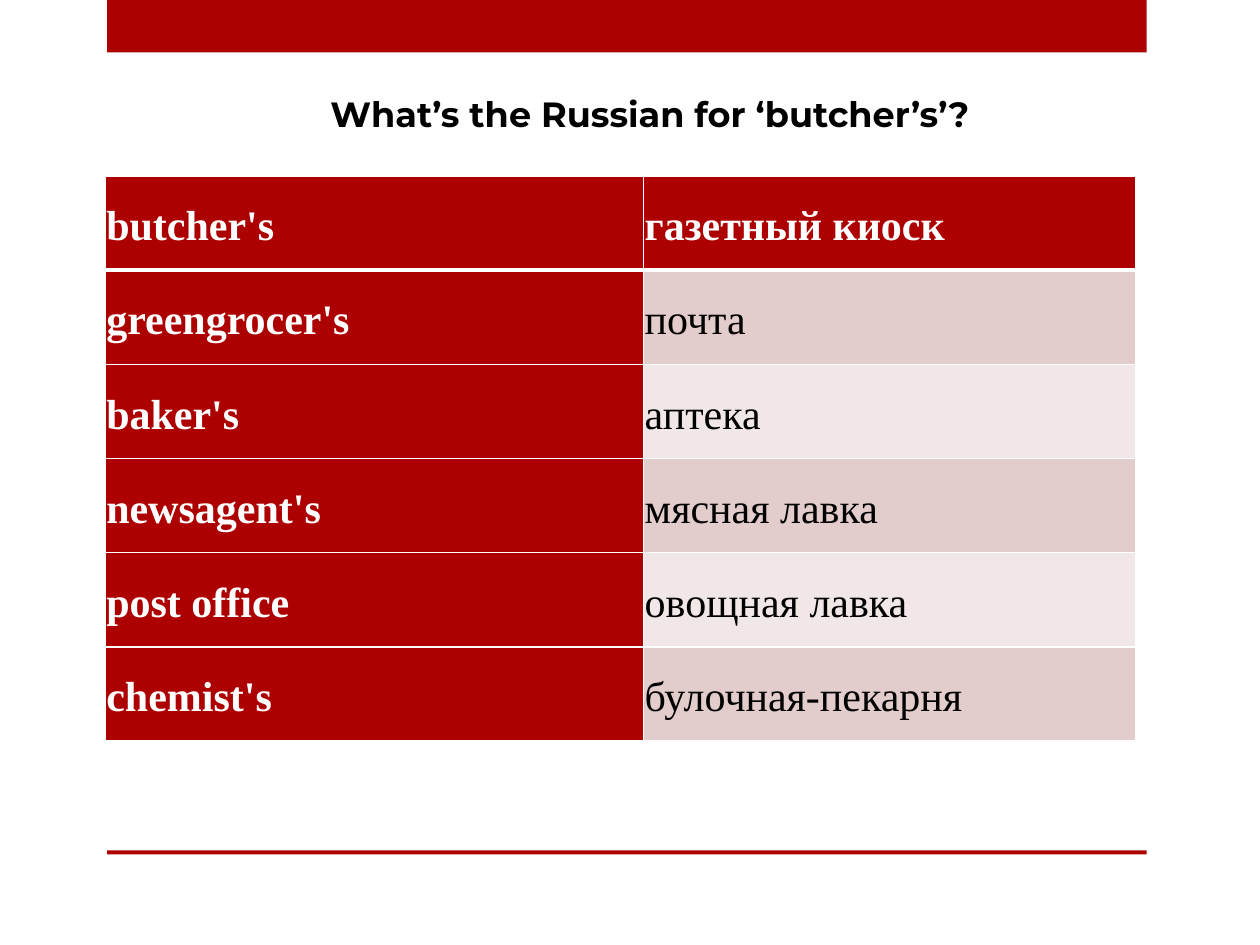
"""Build a vocabulary slide that pairs English shop names with Russian ones."""
from lxml.etree import SubElement
from pptx import Presentation
from pptx.dml.color import RGBColor
from pptx.enum.shapes import MSO_SHAPE
from pptx.enum.text import MSO_ANCHOR, PP_ALIGN
from pptx.oxml.ns import qn
from pptx.util import Pt

TITLE = "What’s the Russian for ‘butcher’s’?"
WORDS = [
    ("butcher's", "газетный киоск"),
    ("greengrocer's", "почта"),
    ("baker's", "аптека"),
    ("newsagent's", "мясная лавка"),
    ("post office", "овощная лавка"),
    ("chemist's", "булочная-пекарня"),
]
COLORS = {"red": "AD0101", "odd": "E3CCCC", "even": "F1E7E7",
          "white": "FFFFFF", "black": "000000"}
BANDS = [(61.2, 0, 594, 30), (61.2, 486, 594, 2.2)]
TITLE_BOX = (139, 49, 465, 31.5)
TABLE_LEFT, TABLE_TOP = 60, 100.5
COLUMN_WIDTHS = (307.7, 281.3)
ROW_HEIGHT = 53.85
CELL_INSET = 0.75


def color(name):
    return RGBColor.from_string(COLORS[name])


def write(frame, text, *, font, size, ink, bold, align=PP_ALIGN.LEFT,
          spacing=1.0, after=0):
    para = frame.paragraphs[0]
    para.alignment = align
    para.line_spacing = spacing
    para.space_before = Pt(0)
    para.space_after = Pt(after)
    span = para.add_run()
    span.text = text
    span.font.name = font
    span.font.size = Pt(size)
    span.font.bold = bold
    span.font.color.rgb = color(ink)


def add_borders(cell, widths):
    properties = cell._tc.get_or_add_tcPr()
    for side, width in widths.items():
        line = SubElement(properties, qn(f"a:ln{side}"), w=str(Pt(width)))
        fill = SubElement(line, qn("a:solidFill"))
        SubElement(fill, qn("a:srgbClr"), val=COLORS["white"])


def add_band(page, box):
    band = page.shapes.add_shape(MSO_SHAPE.RECTANGLE, *map(Pt, box))
    band.shadow.inherit = False
    band.fill.solid()
    band.fill.fore_color.rgb = color("red")
    band.line.fill.background()


def add_title(page):
    title = page.shapes.title
    title.left, title.top, title.width, title.height = map(Pt, TITLE_BOX)
    frame = title.text_frame
    frame.word_wrap = True
    frame.vertical_anchor = MSO_ANCHOR.TOP
    write(frame, TITLE, font="Montserrat", size=20, ink="black", bold=True,
          align=PP_ALIGN.CENTER)


def fill_cell(cell, text, row, column):
    strong = row == 0 or column == 0
    add_borders(cell, {"L": 1, "R": 1, "T": 3 if row == 1 else 1,
                       "B": 3 if row == 0 else 1})
    cell.fill.solid()
    cell.fill.fore_color.rgb = color(
        "red" if strong else "odd" if row % 2 else "even")
    cell.vertical_anchor = MSO_ANCHOR.MIDDLE
    cell.margin_left = cell.margin_right = Pt(CELL_INSET)
    cell.margin_top = cell.margin_bottom = Pt(CELL_INSET)
    write(cell.text_frame, text, font="Times New Roman", size=24,
          ink="white" if strong else "black", bold=strong,
          spacing=1.15, after=10)


def add_words(page):
    table = page.shapes.add_table(
        len(WORDS), len(COLUMN_WIDTHS), Pt(TABLE_LEFT), Pt(TABLE_TOP),
        Pt(sum(COLUMN_WIDTHS)), Pt(ROW_HEIGHT * len(WORDS))).table
    for column, width in zip(table.columns, COLUMN_WIDTHS):
        column.width = Pt(width)
    for row, pair in enumerate(WORDS):
        table.rows[row].height = Pt(ROW_HEIGHT)
        for column, text in enumerate(pair):
            fill_cell(table.cell(row, column), text, row, column)


def main():
    deck = Presentation()
    deck.slide_width, deck.slide_height = Pt(720), Pt(540)
    page = deck.slides.add_slide(deck.slide_layouts[5])
    for box in BANDS:
        add_band(page, box)
    add_words(page)
    add_title(page)
    deck.save("out.pptx")


if __name__ == "__main__":
    main()
